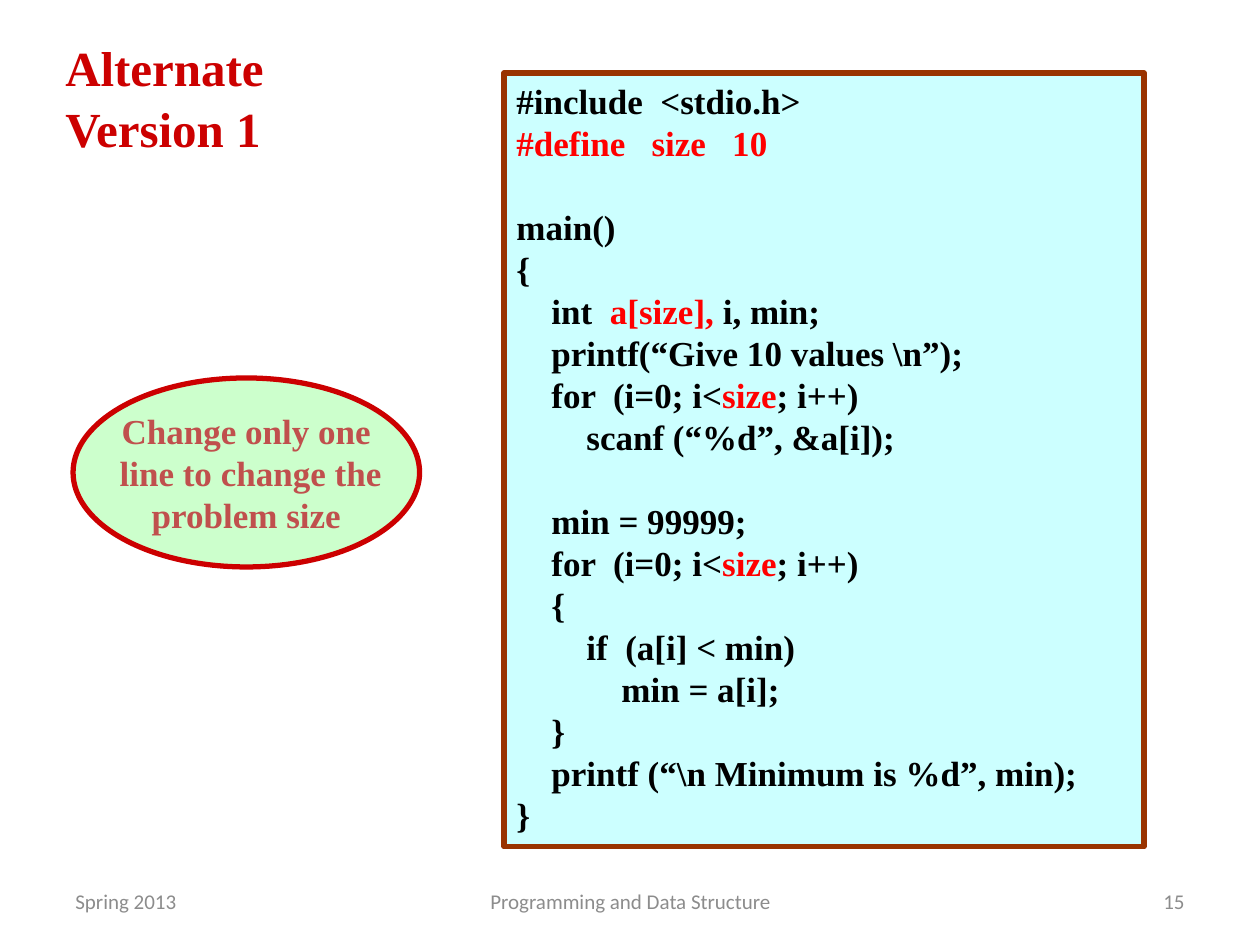
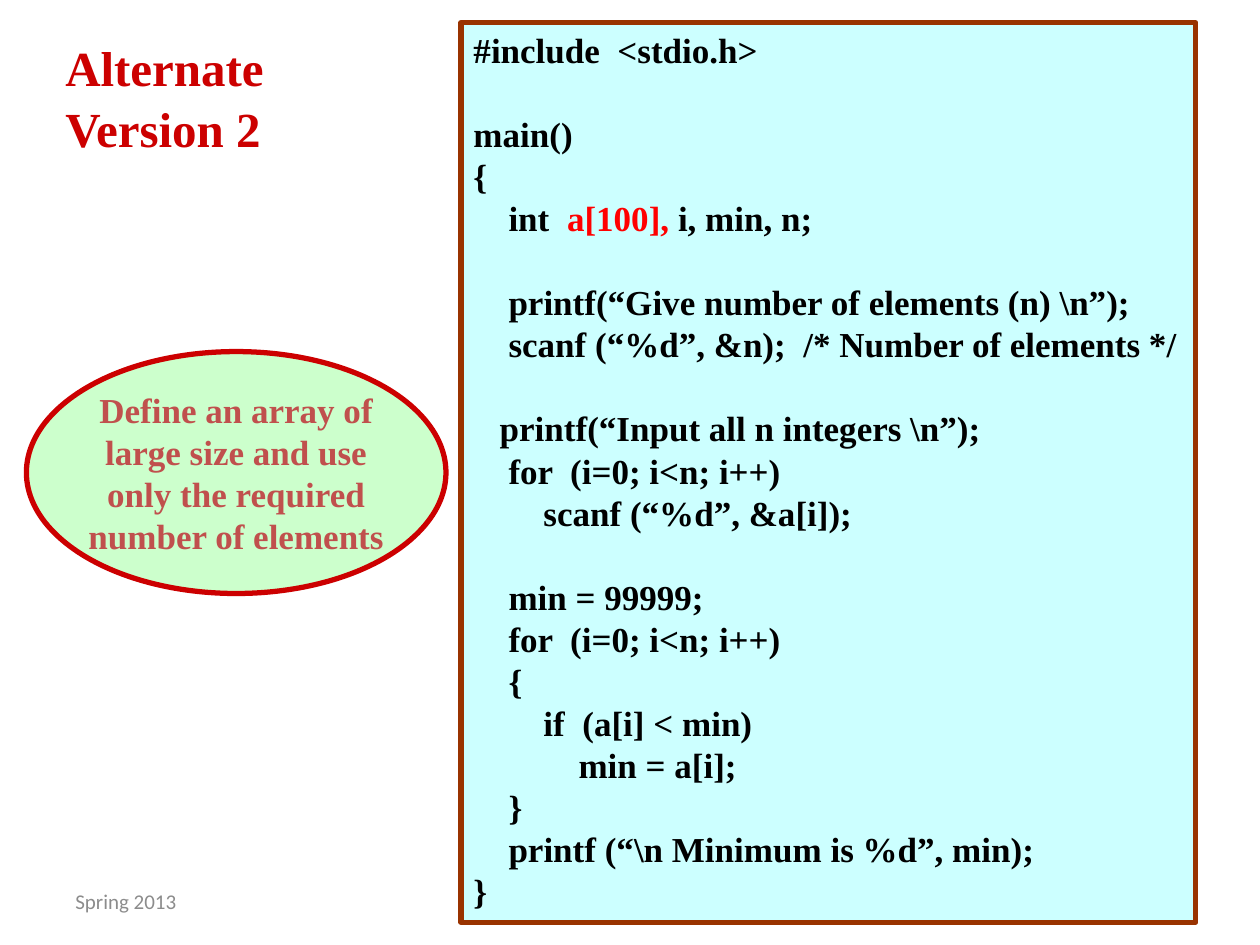
from pptx import Presentation
from pptx.dml.color import RGBColor
from pptx.enum.shapes import MSO_SHAPE as Kind
from pptx.enum.text import MSO_ANCHOR as Anchor, PP_ALIGN as Align
from pptx.util import Inches, Pt

SERIF, SANS = "Times New Roman", "Calibri"
RED, BLACK, GREY, BRICK = "CC0000", "000000", "8C8C8C", "C0504D"
MARK = "FF0000"
AQUA, BROWN, MINT = "CCFFFF", "993300", "CCFFCC"
LEAD = 1.2

CODE_1 = r"""#include  <stdio.h>
|#define   size   10

main()
{
    int  |a[size],| i, min;
    printf(“Give 10 values \n”);
    for  (i=0; i<|size|; i++)
        scanf (“%d”, &a[i]);

    min = 99999;
    for  (i=0; i<|size|; i++)
    {
        if  (a[i] < min)
            min = a[i];
    }
    printf (“\n Minimum is %d”, min);
}"""

CODE_2 = r"""#include  <stdio.h>

main()
{
    int  |a[100],| i, min, n;

    printf(“Give number of elements (n) \n”);
    scanf (“%d”, &n);  /* Number of elements */

   printf(“Input all n integers \n”);
    for  (i=0; i<n; i++)
        scanf (“%d”, &a[i]);

    min = 99999;
    for  (i=0; i<n; i++)
    {
        if  (a[i] < min)
            min = a[i];
    }
    printf (“\n Minimum is %d”, min);
}"""

NOTE_1 = "Change only one\n line to change the\nproblem size"
NOTE_2 = "Define an array of\nlarge size and use\nonly the required\nnumber of elements"


def color(code):
    return RGBColor.from_string(code)


def write(shape, text, size=20, font=SERIF, ink=BLACK, bold=True,
          align=Align.LEFT, anchor=Anchor.TOP, wrap=True, lead=LEAD, gap=0):
    frame = shape.text_frame
    frame.word_wrap = wrap
    frame.vertical_anchor = anchor
    para, before = frame.paragraphs[0], gap
    for num, line in enumerate(text.split("\n")):
        body = line.lstrip()
        if not body:
            before += size * LEAD
            continue
        if num:
            para = frame.add_paragraph()
        para.alignment = align
        para.space_before = Pt(before)
        if lead:
            para.line_spacing = Pt(size * lead)
        indent = Pt((len(line) - len(body)) * size / 4)
        props = para._p.get_or_add_pPr()
        props.set("marL", str(indent))
        props.set("indent", "0")
        for part, piece in enumerate(body.split("|")):
            if piece:
                run = para.add_run()
                run.text = piece
                run.font.name = font
                run.font.size = Pt(size)
                run.font.bold = bold
                run.font.color.rgb = color(MARK if part % 2 else ink)
        before = gap


def label(slide, box, text, **style):
    write(slide.shapes.add_textbox(*map(Inches, box)), text, **style)


def panel(slide, kind, box, fill, edge, text, **style):
    shape = slide.shapes.add_shape(kind, *map(Inches, box))
    shape.shadow.inherit = False
    shape.fill.solid()
    shape.fill.fore_color.rgb = color(fill)
    shape.line.color.rgb = color(edge)
    shape.line.width = Pt(3)
    write(shape, text, **style)


def footer(slide, left, width, text, align=Align.LEFT):
    label(slide, (left, 6.95, width, 0.4), text, size=12, font=SANS, ink=GREY,
          bold=False, align=align, anchor=Anchor.MIDDLE, lead=None)


def version(deck, num, code, frame, note, oval):
    slide = deck.slides.add_slide(deck.slide_layouts[6])
    footer(slide, 0.5, 2.33, "Spring 2013")
    panel(slide, Kind.RECTANGLE, frame, AQUA, BROWN, code)
    label(slide, (0.42, 0.25, 2.17, 1.06), f"Alternate\nVersion {num}",
          size=28, ink=RED, gap=1.4)
    panel(slide, Kind.OVAL, oval, MINT, RED, note, ink=BRICK,
          align=Align.CENTER, anchor=Anchor.MIDDLE, wrap=False)
    return slide


def main():
    deck = Presentation()
    deck.slide_width, deck.slide_height = Inches(10), Inches(7.5)
    first = version(deck, 1, CODE_1, (4, 0.58, 5.08, 6.14),
                    NOTE_1, (0.58, 3, 2.75, 1.5))
    footer(first, 3.42, 3.17, "Programming and Data Structure", Align.CENTER)
    footer(first, 7.17, 2.33, "15", Align.RIGHT)
    version(deck, 2, CODE_2, (3.66, 0.18, 5.83, 7.14),
            NOTE_2, (0.21, 2.79, 3.33, 1.92))
    deck.save("out.pptx")


if __name__ == "__main__":
    main()
